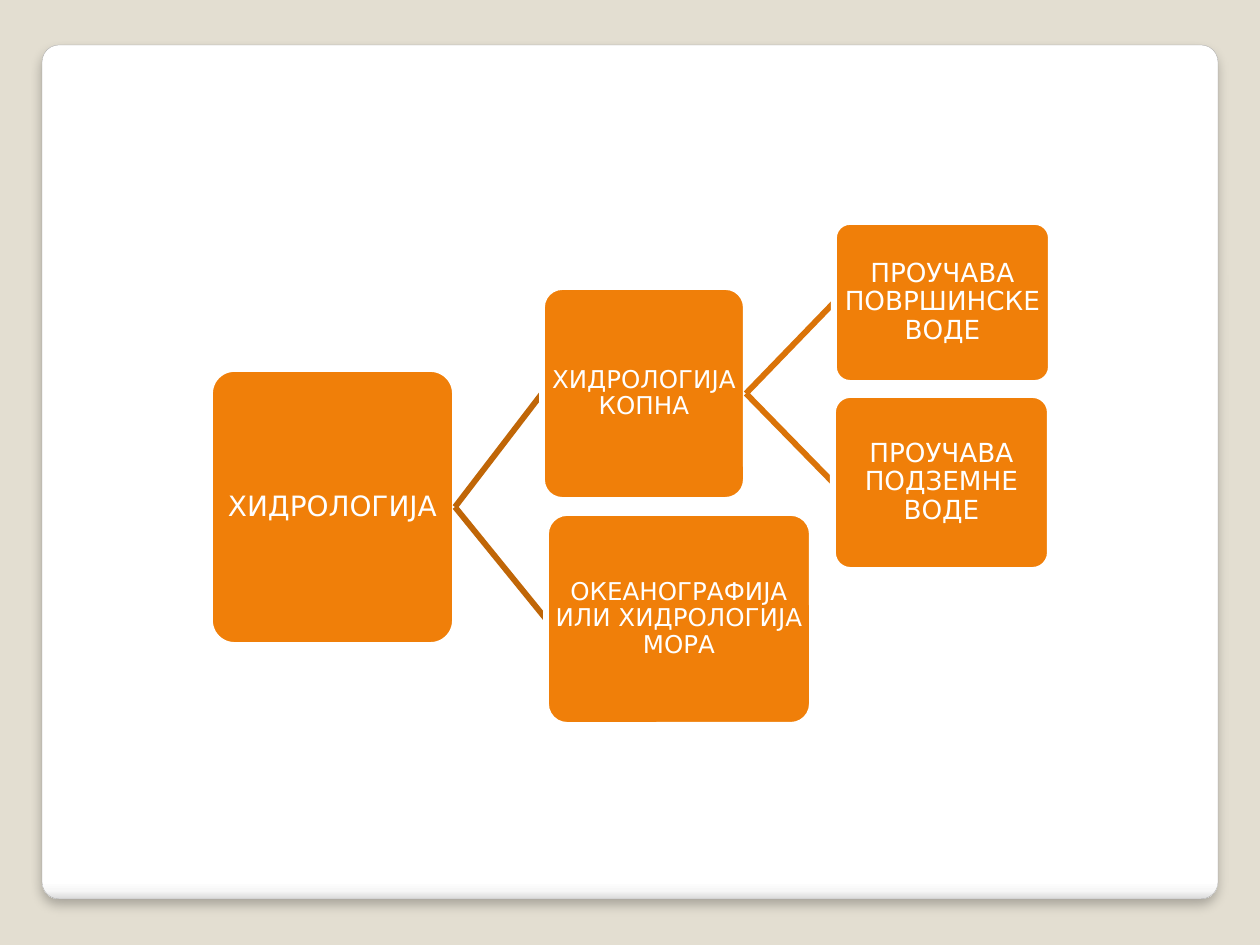
import pptx
import pptx.dml.color
import pptx.enum.shapes
import pptx.enum.text
import pptx.oxml
import pptx.oxml.ns
import pptx.util

EMU_PER_PX = 914400 / 126
FONT = "DejaVu Sans"
COLORS = {
    "background": "E3DED1",
    "card_line": "A4A4A4",
    "white": "FFFFFF",
    "node": "F07F09",
    "first_link": "C06607",
    "second_link": "DA7308",
    "shadow": "000000",
}
CARD_STOPS = [(0, "FFFFFF"), (98, "FFFFFF"), (99, "F7F7F7"), (100, "DADADA")]
DIAGRAM_BOX = (210, 222, 841, 503)

# Node boxes are left, top, width, height inside the diagram box.
TREE = {
    "text": "ХИДРОЛОГИЈА", "size": 16, "box": (0, 147, 245, 276),
    "link": "first_link",
    "children": [
        {
            "text": "ХИДРОЛОГИЈА КОПНА", "size": 14, "box": (332, 65, 204, 213),
            "link": "second_link",
            "children": [
                {"text": "ПРОУЧАВА ПОВРШИНСКЕ ВОДЕ", "size": 15, "box": (624, 0, 217, 161)},
                {"text": "ПРОУЧАВА ПОДЗЕМНЕ ВОДЕ", "size": 15, "box": (623, 173, 217, 175)},
            ],
        },
        {"text": "ОКЕАНОГРАФИЈА ИЛИ ХИДРОЛОГИЈА МОРА", "size": 14, "box": (336, 291, 266, 212)},
    ],
}


def px(length):
    return pptx.util.Emu(round(length * EMU_PER_PX))


def color(name):
    return pptx.dml.color.RGBColor.from_string(COLORS[name])


def drawing_element(xml):
    """Parse a DrawingML element whose root tag ends with the NS marker."""
    return pptx.oxml.parse_xml(xml.replace("NS", pptx.oxml.ns.nsdecls("a"), 1))


def add_rounded_box(slide, box, adjustment, line_color, line_width):
    shape = slide.shapes.add_shape(
        pptx.enum.shapes.MSO_SHAPE.ROUNDED_RECTANGLE, *map(px, box))
    shape.adjustments[0] = adjustment
    shape.fill.solid()
    shape.fill.fore_color.rgb = color("node")
    shape.line.color.rgb = color(line_color)
    shape.line.width = pptx.util.Pt(line_width)
    shape.shadow.inherit = False
    return shape


def write_text(shape, text, *, size, text_color="white", inset=1, line_spacing=0.9):
    frame = shape.text_frame
    frame.word_wrap = True
    frame.vertical_anchor = pptx.enum.text.MSO_ANCHOR.MIDDLE
    frame.margin_left = frame.margin_right = px(inset)
    frame.margin_top = frame.margin_bottom = px(inset)
    paragraph = frame.paragraphs[0]
    paragraph.alignment = pptx.enum.text.PP_ALIGN.CENTER
    paragraph.line_spacing = line_spacing
    run = paragraph.add_run()
    run.text = text
    run.font.name = FONT
    run.font.size = pptx.util.Pt(size)
    run.font.color.rgb = color(text_color)


def add_card(slide, box):
    """Add the white panel with its bottom shading and soft shadow."""
    card = add_rounded_box(slide, box, 0.02, "card_line", 0.16)
    properties = card._element.spPr
    stops = "".join(
        f'<a:gs pos="{position * 1000}"><a:srgbClr val="{value}"/></a:gs>'
        for position, value in CARD_STOPS)
    gradient = drawing_element(
        f'<a:gradFill NS rotWithShape="1"><a:gsLst>{stops}</a:gsLst>'
        '<a:lin ang="5400000" scaled="0"/></a:gradFill>')
    solid = properties.find(pptx.oxml.ns.qn("a:solidFill"))
    properties.replace(solid, gradient)
    effects = properties.find(pptx.oxml.ns.qn("a:effectLst"))
    effects.append(drawing_element(
        f'<a:outerShdw NS blurRad="{pptx.util.Pt(6)}" dist="{pptx.util.Pt(4)}" '
        f'dir="5400000" rotWithShape="0"><a:srgbClr val="{COLORS["shadow"]}">'
        '<a:alpha val="25000"/></a:srgbClr></a:outerShdw>'))


def add_link(slide, start, end, link_color):
    """Draw a line from the right middle of one point to the left middle of the next."""
    link = slide.shapes.add_connector(
        pptx.enum.shapes.MSO_CONNECTOR.STRAIGHT, *map(px, (*start, *end)))
    link.line.color.rgb = color(link_color)
    link.line.width = pptx.util.Pt(3.35)
    link._element.spPr.append(drawing_element("<a:effectLst NS/>"))


def add_tree(slide, box, node):
    """Add a node, then each child with its link beneath the child's box."""
    left, top, width, height = node["box"]
    left, top = left + box[0], top + box[1]
    shape = add_rounded_box(slide, (left, top, width, height), 0.1, "white", 3.35)
    write_text(shape, node["text"], size=node["size"])
    for child in node.get("children", []):
        child_left, child_top, _, child_height = child["box"]
        end = (box[0] + child_left, box[1] + child_top + child_height / 2)
        add_link(slide, (left + width, top + height / 2), end, node["link"])
        add_tree(slide, box, child)


def main():
    presentation = pptx.Presentation()
    presentation.slide_width, presentation.slide_height = px(1260), px(945)
    slide = presentation.slides.add_slide(presentation.slide_layouts[6])
    slide.background.fill.solid()
    slide.background.fill.fore_color.rgb = color("background")
    add_card(slide, (42, 45, 1176, 854))
    add_tree(slide, DIAGRAM_BOX, TREE)
    presentation.save("out.pptx")


if __name__ == "__main__":
    main()
